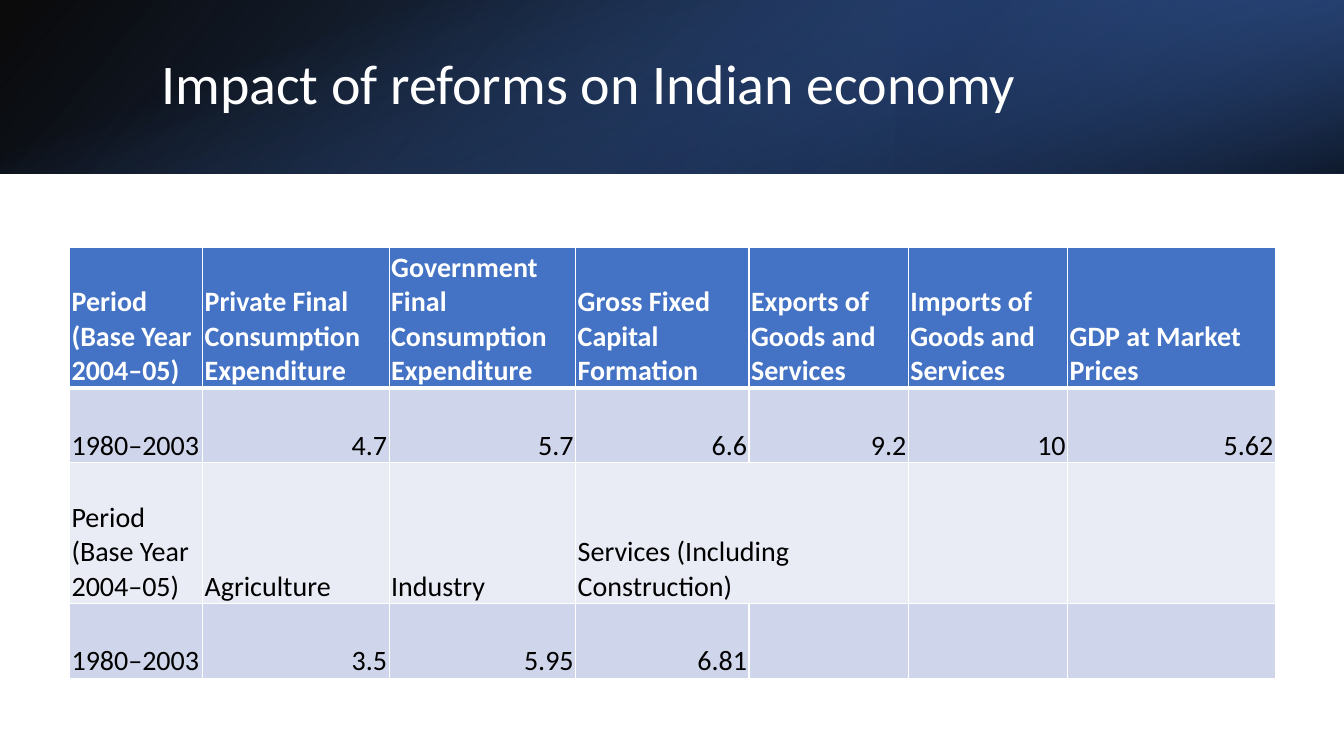
from lxml.etree import SubElement
from pptx import Presentation
from pptx.dml.color import RGBColor
from pptx.enum.shapes import MSO_SHAPE
from pptx.enum.text import MSO_ANCHOR, PP_ALIGN
from pptx.oxml import parse_xml
from pptx.oxml.ns import nsdecls, qn
from pptx.util import Inches, Pt

WHITE = RGBColor(0xFF, 0xFF, 0xFF)
BLACK = RGBColor(0, 0, 0)
BLUE = RGBColor(0x44, 0x72, 0xC4)
DEEP = RGBColor(0x2F, 0x55, 0x97)
NAVY = RGBColor(0x20, 0x38, 0x64)
PALE = RGBColor(0xCF, 0xD5, 0xEA)
MIST = RGBColor(0xE9, 0xEB, 0xF5)

FONT = "Calibri"
WIDE, HIGH = 13.33, 7.5
BAND = 1.72

COLS = [1.32, 1.85, 1.85, 1.72, 1.58, 1.58, 2.06]
ROWS = [1.4, 0.74, 1.4, 0.74]
FILLS = [BLUE, PALE, MIST, PALE]
PERIOD = "Period (Base Year 2004–05)"
YEARS = "1980–2003"
DATA = [
    [PERIOD, "Private Final Consumption Expenditure",
     "Government Final Consumption Expenditure",
     "Gross Fixed Capital Formation", "Exports of Goods and Services",
     "Imports of Goods and Services", "GDP at Market Prices"],
    [YEARS, "4.7", "5.7", "6.6", "9.2", "10", "5.62"],
    [PERIOD, "Agriculture", "Industry", "Services (Including Construction)"],
    [YEARS, "3.5", "5.95", "6.81"],
]


def layer(slide, box, stops, angle, turn=0, flip=False):
    """Add a rectangle with a gradient of (place, colour, opacity) stops."""
    rect = slide.shapes.add_shape(MSO_SHAPE.RECTANGLE, *map(Inches, box))
    rect.shadow.inherit = False
    rect.line.fill.background()
    rect.rotation = turn
    props = rect._element.spPr
    if flip:
        props.find(qn("a:xfrm")).set("flipH", "1")
    marks = "".join(
        f'<a:gs pos="{pos * 1000}"><a:srgbClr val="{tone}">'
        f'<a:alpha val="{alpha * 1000}"/></a:srgbClr></a:gs>'
        for pos, tone, alpha in stops)
    props.find(qn("a:prstGeom")).addnext(parse_xml(
        f'<a:gradFill rotWithShape="1" {nsdecls("a")}><a:gsLst>{marks}</a:gsLst>'
        f'<a:lin ang="{angle * 60000}" scaled="0"/></a:gradFill>'))


def banner(slide, left, top, width, height):
    """Stack the gradient layers and lay the title over them."""
    layer(slide, (left, top, width, height),
          [(0, BLACK, 96), (100, DEEP, 100)], 140, flip=True)
    layer(slide, (left + width * 2 / 3, top, width / 3, height),
          [(19, NAVY, 68), (100, BLUE, 79)], 320, turn=180, flip=True)
    # Upright strip turned on its side to fill the band
    shift = (width - height) / 2
    layer(slide, (left + shift, top - shift, height, width),
          [(23, BLUE, 0), (99, BLACK, 74)], 340, turn=90)

    title = slide.shapes.title
    title.left, title.top = Inches(left + 1.5), Inches(top + 0.38)
    title.width, title.height = Inches(10.98), Inches(0.96)
    frame = title.text_frame
    frame.text = "Impact of reforms on Indian economy"
    frame.vertical_anchor = MSO_ANCHOR.MIDDLE
    para = frame.paragraphs[0]
    para.alignment = PP_ALIGN.LEFT
    para.line_spacing = 0.9
    para.font.name, para.font.size = FONT, Pt(40)
    para.font.color.rgb = WHITE
    slide.shapes._spTree.append(title._element)  # bring to front


def edge(cell, top, base):
    """Draw white cell borders, with the given top and base weights."""
    props = cell._tc.get_or_add_tcPr()
    sides = [("L", 1), ("R", 1), ("T", top), ("B", base)]
    for spot, (side, size) in enumerate(sides):
        line = parse_xml(f'<a:ln{side} w="{Pt(size)}" {nsdecls("a")}/>')
        fill = SubElement(line, qn("a:solidFill"))
        SubElement(fill, qn("a:srgbClr")).set("val", str(WHITE))
        props.insert(spot, line)


def style(cell, text, row):
    """Fill one table cell and set its text."""
    head = row == 0
    cell.fill.solid()
    cell.fill.fore_color.rgb = FILLS[row]
    edge(cell, 3 if row == 1 else 1, 3 if head else 1)
    cell.vertical_anchor = MSO_ANCHOR.BOTTOM
    cell.margin_left = cell.margin_right = cell.margin_top = Inches(0.02)
    cell.margin_bottom = 0
    cell.text = text
    para = cell.text_frame.paragraphs[0]
    number = text.replace(".", "").isdigit()
    para.alignment = PP_ALIGN.RIGHT if number else PP_ALIGN.LEFT
    para.font.name, para.font.size = FONT, Pt(20)
    para.font.bold = head
    para.font.color.rgb = WHITE if head else BLACK


def growth(slide, left, top):
    """Place the table of growth rates."""
    box = map(Inches, (left, top, sum(COLS), sum(ROWS)))
    table = slide.shapes.add_table(len(ROWS), len(COLS), *box).table
    for col, width in zip(table.columns, COLS):
        col.width = Inches(width)
    for row, height in enumerate(ROWS):
        table.rows[row].height = Inches(height)
        for col in range(len(COLS)):
            text = DATA[row][col] if col < len(DATA[row]) else ""
            style(table.cell(row, col), text, row)
    table.cell(2, 3).merge(table.cell(2, 4))


def main():
    deck = Presentation()
    deck.slide_width, deck.slide_height = Inches(WIDE), Inches(HIGH)
    slide = deck.slides.add_slide(deck.slide_layouts[5])
    banner(slide, 0, 0, WIDE, BAND)
    growth(slide, 0.69, 2.45)
    deck.save("out.pptx")


if __name__ == "__main__":
    main()
